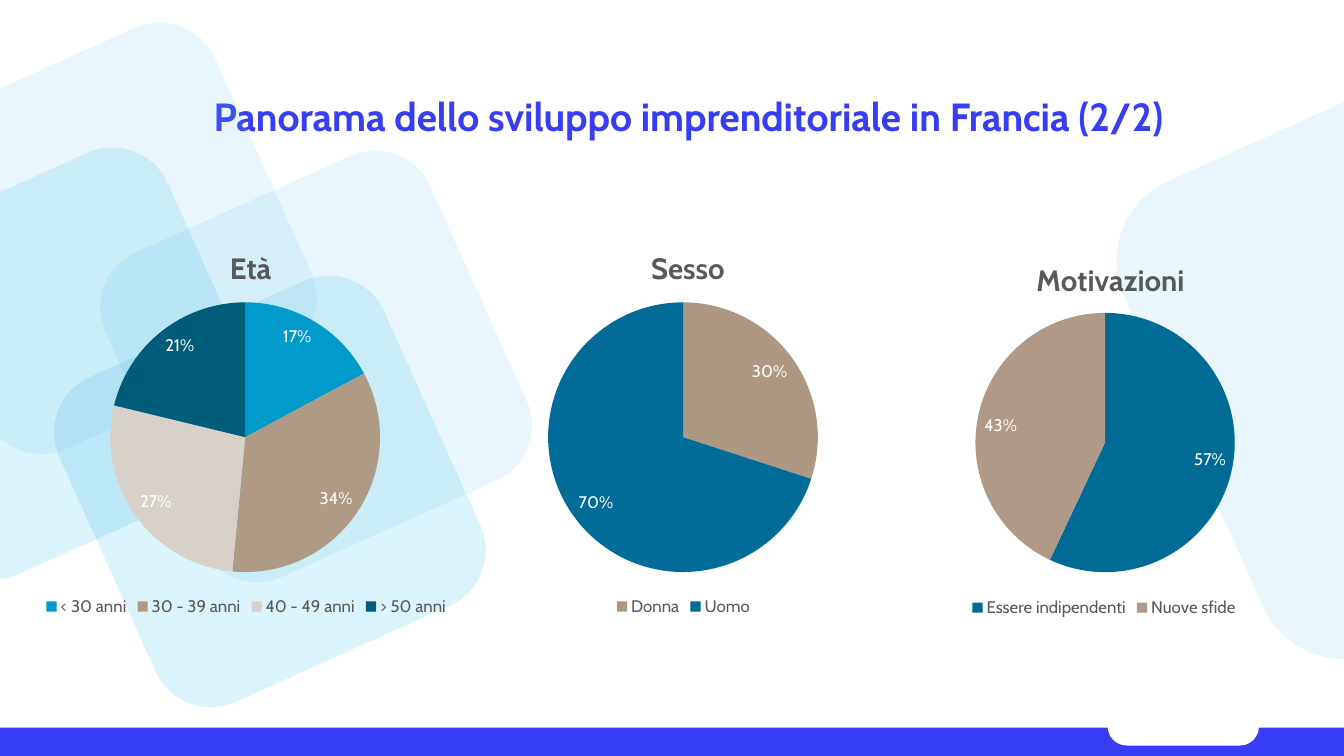
from lxml.etree import SubElement
from pptx import Presentation
from pptx.chart.data import CategoryChartData
from pptx.dml.color import RGBColor
from pptx.enum.chart import XL_CHART_TYPE, XL_LABEL_POSITION, XL_LEGEND_POSITION
from pptx.enum.shapes import MSO_SHAPE
from pptx.enum.text import MSO_ANCHOR, PP_ALIGN
from pptx.oxml import parse_xml
from pptx.oxml.ns import nsdecls, qn
from pptx.util import Pt

PX = 9525
BLUE, WHITE, GREY = "373CF5", "FFFFFF", "595959"


def paint(target, color):
    if hasattr(target, "solid"):
        target.solid()
        target = target.fore_color
    else:
        target = target.color
    target.rgb = RGBColor.from_string(color)


def set_layout(parent, index, values, target=""):
    for old in parent.findall(qn("c:layout")):
        parent.remove(old)
    modes = "".join(f'<c:{axis}Mode val="edge"/>' for axis in "xy")
    sizes = "".join(f'<c:{key} val="{value:.4f}"/>' for key, value in values.items())
    parent.insert(index, parse_xml(
        f'<c:layout {nsdecls("c")}><c:manualLayout>{target}{modes}{sizes}'
        "</c:manualLayout></c:layout>"))


deck = Presentation()
deck.slide_width = 1280 * PX
deck.slide_height = 720 * PX
page = deck.slides.add_slide(deck.slide_layouts[5])
title = page.shapes.title

tiles = [
    (257, 468, 339, "00ABE0"),
    (301, 349, 339, "67C4E8"),
    (51, 346, 339, "00ABE0"),
    (96, 227, 339, "67C4E8"),
    (1361, 330, 491, "67C4E8"),
]
for center_x, center_y, side, color in tiles:
    tile = page.shapes.add_shape(
        MSO_SHAPE.ROUNDED_RECTANGLE, (center_x - side / 2) * PX,
        (center_y - side / 2) * PX, side * PX, side * PX)
    tile.adjustments[0] = 0.17
    tile.rotation = -24.2
    tile.shadow.inherit = False
    tile.line.fill.background()
    paint(tile.fill, color)
    color_element = tile.fill._xPr.find(qn("a:solidFill"))[0]
    SubElement(color_element, qn("a:alpha")).set("val", "14000")

footer_parts = [
    (MSO_SHAPE.RECTANGLE, 0, 693, 1280, 27, BLUE),
    (MSO_SHAPE.ROUNDED_RECTANGLE, 1055, 674, 144, 36, WHITE),
]
for preset, left, top, width, height, color in footer_parts:
    part = page.shapes.add_shape(preset, left * PX, top * PX, width * PX, height * PX)
    if preset == MSO_SHAPE.ROUNDED_RECTANGLE:
        part.adjustments[0] = 0.5
    part.shadow.inherit = False
    part.line.fill.background()
    paint(part.fill, color)

pies = [
    {"name": "Età", "frame": (-22, 210, 513, 381), "heading": (214, 231),
     "circle": (105, 288, 257),
     "slices": [("< 30 anni", 17, "009BCB"), ("30 - 39 anni", 34, "AF9A86"),
                ("40 - 49 anni", 27, "D8D1CA"), ("> 50 anni", 21, "005D7A")]},
    {"name": "Sesso", "frame": (367, 210, 568, 381), "heading": (615, 231),
     "circle": (522, 288, 257),
     "slices": [("Donna", 30, "AD9983"), ("Uomo", 70, "006C97")]},
    {"name": "Motivazioni", "frame": (766, 222, 571, 370), "heading": (982, 242),
     "circle": (929, 298, 247),
     "slices": [("Essere indipendenti", 57, "006C95"), ("Nuove sfide", 43, "AE9A86")]},
]
for pie in pies:
    left, top, width, height = pie["frame"]
    data = CategoryChartData()
    data.categories = [label for label, value, color in pie["slices"]]
    data.add_series(pie["name"], [value for label, value, color in pie["slices"]])
    chart = page.shapes.add_chart(
        XL_CHART_TYPE.PIE, left * PX, top * PX, width * PX, height * PX, data).chart
    chart.font.name = "Cabin"
    chart.has_title = True
    chart.has_legend = True
    chart.legend.position = XL_LEGEND_POSITION.BOTTOM
    chart.legend.include_in_layout = False

    para = chart.chart_title.text_frame.paragraphs[0]
    span = para.add_run()
    span.text = pie["name"]
    plot = chart.plots[0]
    plot.vary_by_categories = True
    for point_index, (label, value, color) in enumerate(pie["slices"]):
        paint(plot.series[0].points[point_index].format.fill, color)

    labels = plot.series[0].data_labels
    labels.show_percentage = True
    labels.show_value = False
    labels.number_format = "0%"
    labels.number_format_is_linked = False
    labels.position = XL_LABEL_POSITION.INSIDE_END
    fonts = [(span.font, 21, True, GREY), (chart.legend.font, 12, False, GREY),
             (labels.font, 12, False, WHITE)]
    for font, size, bold, color in fonts:
        for key, value in {"name": "Cabin", "size": Pt(size), "bold": bold}.items():
            setattr(font, key, value)
        paint(font, color)

    heading_x, heading_y = pie["heading"]
    set_layout(chart.chart_title._element, 1,
               {"x": (heading_x - left) / width, "y": (heading_y - top) / height})
    circle_x, circle_y, diameter = pie["circle"]
    set_layout(chart._chartSpace.chart.plotArea, 0,
               {"x": (circle_x - left) / width, "y": (circle_y - top) / height,
                "w": diameter / width, "h": diameter / height},
               '<c:layoutTarget val="inner"/>')

title_box = {"left": 138, "top": 83, "width": 1035, "height": 55}
for key, value in title_box.items():
    setattr(title, key, value * PX)
title.text_frame.text = "Panorama dello sviluppo imprenditoriale in Francia (2/2)"
title.text_frame.word_wrap = True
title.text_frame.vertical_anchor = MSO_ANCHOR.MIDDLE
para = title.text_frame.paragraphs[0]
para.alignment = PP_ALIGN.CENTER
span = para.runs[0]
for key, value in {"name": "Cabin", "size": Pt(28), "bold": True}.items():
    setattr(span.font, key, value)
paint(span.font, BLUE)

deck.save("out.pptx")
